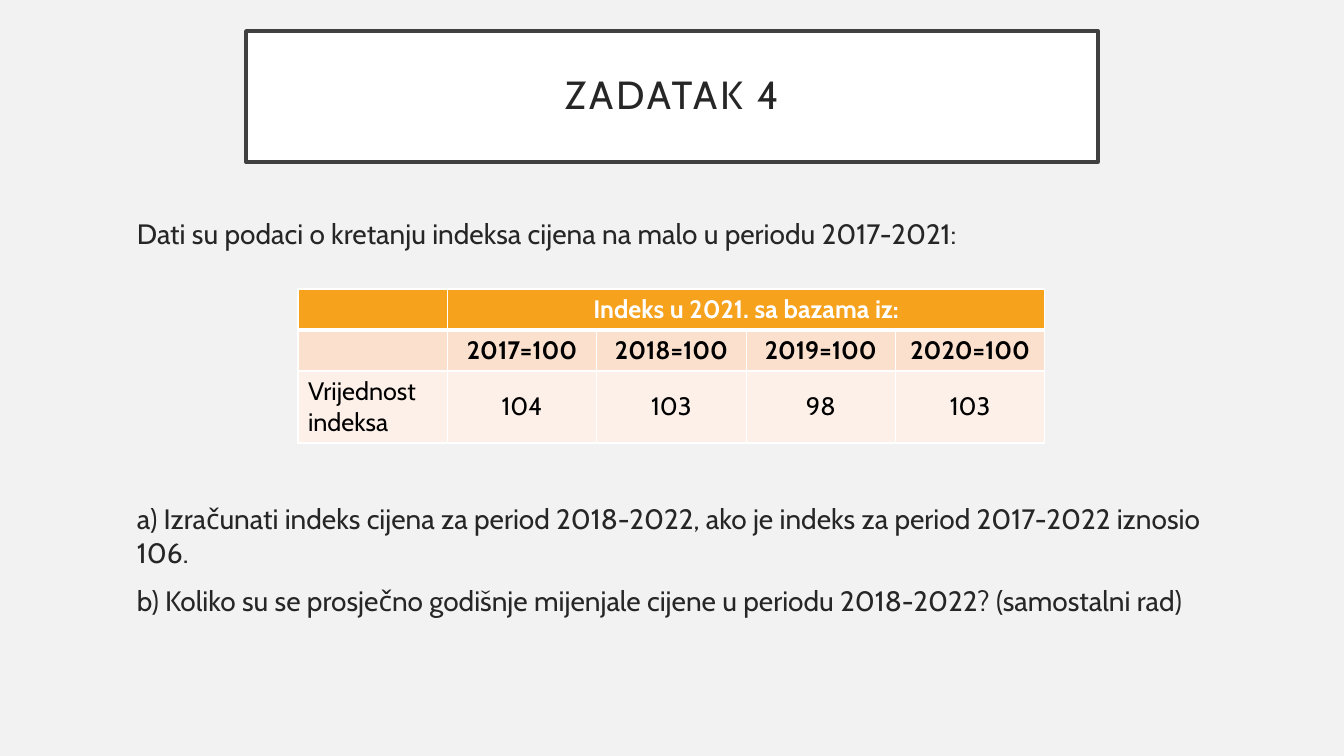
from lxml import etree
from pptx import Presentation
from pptx.dml.color import RGBColor
from pptx.enum.text import MSO_ANCHOR, MSO_AUTO_SIZE, PP_ALIGN
from pptx.oxml.ns import qn
from pptx.util import Pt

PX = 914400 / 100.8
LEFT, CENTER = PP_ALIGN.LEFT, PP_ALIGN.CENTER
MIDDLE = MSO_ANCHOR.MIDDLE
NO_FIT = MSO_AUTO_SIZE.NONE
WHITE, BLACK, INK = "FFFFFF", "000000", "262626"


def px(*lengths):
    return [round(length * PX) for length in lengths]


def write(frame, text, size=20, color=INK, bold=False, align=LEFT, tracking=0):
    """Fill the frame, one paragraph per line of text."""
    frame.word_wrap = True
    for index, line in enumerate(text.split("\n")):
        para = frame.add_paragraph() if index else frame.paragraphs[0]
        para.alignment = align
        if index:
            para.space_before = Pt(10)
        span = para.add_run()
        span.text = line
        span.font.name = "Cabin"
        span.font.size = Pt(size)
        span.font.bold = bold
        span.font.color.rgb = RGBColor.from_string(color)
        if tracking:
            span.font._element.set("spc", str(tracking * 100))


deck = Presentation()
deck.slide_width, deck.slide_height = px(1344, 756)
page = deck.slides.add_slide(deck.slide_layouts[5])
page.background.fill.solid()
page.background.fill.fore_color.rgb = RGBColor.from_string("F2F2F2")

# Title in a framed box
title = page.shapes.title
title.left, title.top, title.width, title.height = px(246, 31, 852, 131)
title.fill.solid()
title.fill.fore_color.rgb = RGBColor.from_string(WHITE)
title.line.color.rgb = RGBColor.from_string("404040")
title.line.width = Pt(2.5)
frame = title.text_frame
frame.auto_size = NO_FIT
frame.vertical_anchor = MIDDLE
frame.margin_left, frame.margin_top, frame.margin_right, frame.margin_bottom = px(20, 20, 20, 20)
write(frame, "ZADATAK 4", size=28, align=CENTER, tracking=2)
frame.paragraphs[0].line_spacing = 0.9

# Introduction above the table, questions below it
passages = [
    (212, 45, "Dati su podaci o kretanju indeksa cijena na malo u periodu 2017-2021:"),
    (497, 130, "a) Izračunati indeks cijena za period 2018-2022, ako je indeks za period "
               "2017-2022 iznosio 106.\n"
               "b) Koliko su se prosječno godišnje mijenjale cijene u periodu 2018-2022? "
               "(samostalni rad)"),
]
for top, height, text in passages:
    box = page.shapes.add_textbox(*px(127, top, 1090, height))
    write(box.text_frame, text)

# Table of indices
rows = [
    ["", "Indeks u 2021. sa bazama iz:", "", "", ""],
    ["", "2017=100", "2018=100", "2019=100", "2020=100"],
    ["Vrijednost indeksa", "104", "103", "98", "103"],
]
row_styles = [  # height, fill, text colour, bold
    (41, "F6A21D", WHITE, True),
    (41, "FBE0CD", BLACK, True),
    (72, "FDF0E8", BLACK, False),
]
table = page.shapes.add_table(3, 5, *px(298, 289, 747, 154)).table
table.cell(0, 1).merge(table.cell(0, 4))
for row, (values, (height, fill, color, bold)) in enumerate(zip(rows, row_styles)):
    table.rows[row].height = px(height)[0]
    for column, value in enumerate(values):
        cell = table.cell(row, column)
        cell.vertical_anchor = MIDDLE
        if value:
            write(cell.text_frame, value, size=18, color=color, bold=bold,
                  align=CENTER if column else LEFT)
        # Borders come before the fill in the cell properties
        properties = cell._tc.get_or_add_tcPr()
        for side in ("lnL", "lnR", "lnT", "lnB"):
            heavy = (row, side) in ((0, "lnB"), (1, "lnT"))
            border = etree.SubElement(properties, qn(f"a:{side}"), w=str(Pt(3 if heavy else 1)))
            paint = etree.SubElement(border, qn("a:solidFill"))
            etree.SubElement(paint, qn("a:srgbClr"), val=WHITE)
        cell.fill.solid()
        cell.fill.fore_color.rgb = RGBColor.from_string(fill)

deck.save("out.pptx")
